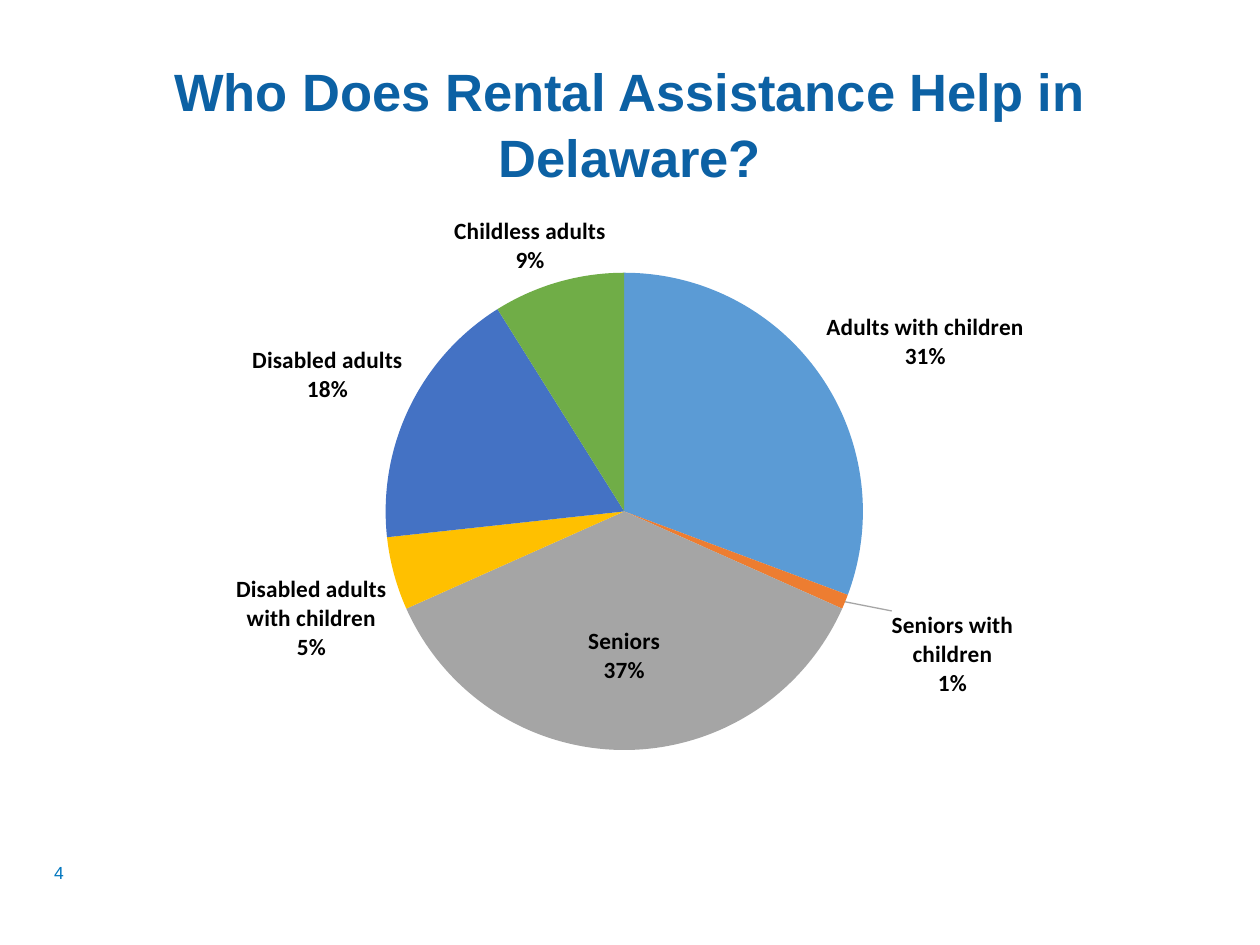
from lxml import etree
from pptx import Presentation
from pptx.chart import data as chart_data
from pptx.dml import color
from pptx.enum import chart as chart_enum, shapes, text
from pptx.oxml import parse_xml
from pptx.oxml.ns import nsdecls, qn
from pptx.util import Cm, Pt

COLOURS = {
    "title": "0C61A4",
    "number": "0076BF",
    "paper": "FFFFFF",
    "label": "000000",
    "leader": "A6A6A6",
}
HEADING = {"name": "Arial", "size": Pt(30), "bold": True}
NUMBER = {"name": "Arial", "size": Pt(10), "bold": False}
LABEL = {"name": "Calibri", "size": Pt(13.3), "bold": True}

POSITION = chart_enum.XL_LABEL_POSITION
GROUPS = [
    ("Adults with children", 31, "5B9BD5", POSITION.OUTSIDE_END, None),
    ("Seniors with children", 1, "ED7D31", POSITION.OUTSIDE_END, (0.04, 0.01)),
    ("Seniors", 37, "A5A5A5", POSITION.CENTER, (0, 0.04)),
    ("Disabled adults with children", 5, "FFC000", POSITION.OUTSIDE_END, None),
    ("Disabled adults", 18, "4472C4", POSITION.OUTSIDE_END, None),
    ("Childless adults", 9, "70AD47", POSITION.OUTSIDE_END, (0.05, 0)),
]
PLOT_AREA = {"x": 0.277, "y": 0.12, "w": 0.48, "h": 0.75}


class SlideBuilder:
    def __init__(self, presentation):
        self.slide = presentation.slides.add_slide(presentation.slide_layouts[6])

    def style(self, font, formats, colour):
        for name, value in formats.items():
            setattr(font, name, value)
        font.color.rgb = color.RGBColor.from_string(COLOURS[colour])

    def add_words(self, shape, words, formats, colour, align, spacing=1.0):
        frame = shape.text_frame
        frame.word_wrap = True
        frame.vertical_anchor = text.MSO_ANCHOR.TOP
        paragraph = frame.paragraphs[0]
        paragraph.alignment = align
        paragraph.line_spacing = spacing
        run = paragraph.add_run()
        run.text = words
        self.style(run.font, formats, colour)

    def title(self, words, box):
        shape = self.slide.shapes.add_textbox(*map(Cm, box))
        self.add_words(shape, words, HEADING, "title", text.PP_ALIGN.CENTER, 1.04)

    def page_number(self, words, box):
        shape = self.slide.shapes.add_shape(
            shapes.MSO_SHAPE.RECTANGLE, *map(Cm, box))
        shape.shadow.inherit = False
        shape.fill.solid()
        shape.fill.fore_color.rgb = color.RGBColor.from_string(COLOURS["paper"])
        shape.line.fill.background()
        for side in ("left", "top", "right", "bottom"):
            setattr(shape.text_frame, f"margin_{side}", 0)
        self.add_words(shape, words, NUMBER, "number", text.PP_ALIGN.LEFT)

    def manual_layout(self, values, inner=False):
        layout = etree.Element(qn("c:layout"))
        manual = etree.SubElement(layout, qn("c:manualLayout"))
        if inner:
            etree.SubElement(manual, qn("c:layoutTarget")).set("val", "inner")
            for axis in "xy":
                etree.SubElement(manual, qn(f"c:{axis}Mode")).set("val", "edge")
        for name, value in values.items():
            etree.SubElement(manual, qn(f"c:{name}")).set("val", str(value))
        return layout

    def pie(self, groups, box):
        data = chart_data.CategoryChartData()
        data.categories = [group[0] for group in groups]
        data.add_series("Series 1", [group[1] for group in groups])
        chart = self.slide.shapes.add_chart(
            chart_enum.XL_CHART_TYPE.PIE, *map(Cm, box), data).chart
        chart.has_legend = False
        chart.has_title = False
        self.style(chart.font, LABEL, "label")
        plot = chart.plots[0]
        plot.vary_by_categories = True
        area = plot._element.getparent()
        for old in area.findall(qn("c:layout")):
            area.remove(old)
        area.insert(0, self.manual_layout(PLOT_AREA, inner=True))

        series = plot.series[0]
        labels = series.data_labels
        formats = {"show_value": False, "show_category_name": True,
                   "show_percentage": True, "number_format": "0%",
                   "number_format_is_linked": False,
                   "position": POSITION.OUTSIDE_END}
        for name, value in formats.items():
            setattr(labels, name, value)
        self.style(labels.font, LABEL, "label")
        for index, (_, _, fill, position, offset) in enumerate(groups):
            point = series.points[index]
            point.format.fill.solid()
            point.format.fill.fore_color.rgb = color.RGBColor.from_string(fill)
            point.format.line.fill.background()
            point.data_label.position = position
            self.style(point.data_label.font, LABEL, "label")
        for item, group in zip(labels._element.findall(qn("c:dLbl")), groups):
            for name, value in (("showVal", 0), ("showCatName", 1),
                                ("showPercent", 1)):
                item.find(qn(f"c:{name}")).set("val", str(value))
            separator = etree.SubElement(item, qn("c:separator"))
            separator.text = "\n"
            if group[4]:
                item.insert(1, self.manual_layout(dict(zip("xy", group[4]))))
        self.leader_lines(labels._element)

    def leader_lines(self, element):
        for old in element.findall(qn("c:showLeaderLines")):
            element.remove(old)
        etree.SubElement(element, qn("c:separator")).text = "\n"
        etree.SubElement(element, qn("c:showLeaderLines")).set("val", "1")
        element.append(parse_xml(
            f'<c:leaderLines {nsdecls("c", "a")}><c:spPr><a:ln w="9525">'
            f'<a:solidFill><a:srgbClr val="{COLOURS["leader"]}"/></a:solidFill>'
            '</a:ln></c:spPr></c:leaderLines>'))


def main():
    presentation = Presentation()
    presentation.slide_width = Cm(25.4)
    presentation.slide_height = Cm(19.05)
    builder = SlideBuilder(presentation)
    builder.title("Who Does Rental Assistance Help in Delaware?",
                  (1.75, 1.02, 21.9, 3.68))
    builder.page_number("4", (1.09, 17.37, 0.86, 0.76))
    builder.pie(GROUPS, (2.21, 3.96, 20.07, 12.83))
    presentation.save("out.pptx")


if __name__ == "__main__":
    main()
